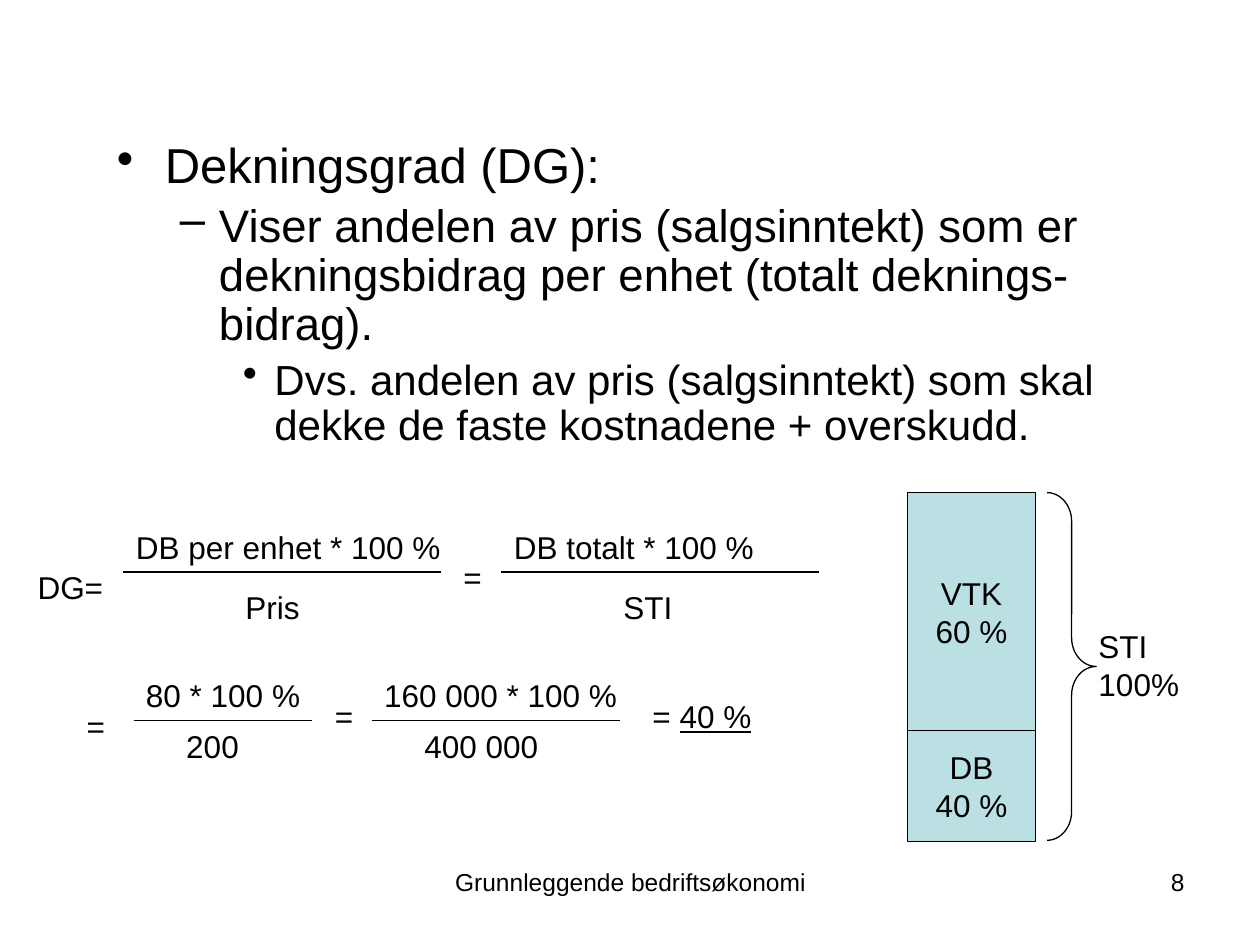
import dataclasses

import lxml.etree
import pptx
import pptx.dml.color
import pptx.enum.shapes
import pptx.enum.text
import pptx.oxml.ns
import pptx.util

PX = pptx.util.Inches(1) // 100
ALIGN = pptx.enum.text.PP_ALIGN
ANCHOR = pptx.enum.text.MSO_ANCHOR
SHAPE = pptx.enum.shapes.MSO_SHAPE


@dataclasses.dataclass(frozen=True)
class Theme:
    font: str = "Arial"
    ink: str = "000000"
    bar: str = "BBE0E3"
    rule: float = 0.75
    footer: int = 14
    formula: int = 18
    levels: tuple = (28, 26, 24)


THEME = Theme()


def color(value):
    return pptx.dml.color.RGBColor.from_string(value)


def add_xml(parent, tag, **attributes):
    return lxml.etree.SubElement(parent, pptx.oxml.ns.qn(tag), attributes)


def style(para, size, align=ALIGN.LEFT):
    para.alignment = align
    para.font.name = THEME.font
    para.font.size = pptx.util.Pt(size)
    para.font.color.rgb = color(THEME.ink)


def outline(item):
    item.line.color.rgb = color(THEME.ink)
    item.line.width = pptx.util.Pt(THEME.rule)


def add_box(shapes, left, top, width, height):
    box = shapes.add_textbox(left * PX, top * PX, width * PX, height * PX)
    box.text_frame.word_wrap = True
    return box


def add_label(shapes, left, top, width, text, height=40):
    box = add_box(shapes, left, top, width, height)
    box.text_frame.auto_size = pptx.enum.text.MSO_AUTO_SIZE.SHAPE_TO_FIT_TEXT
    para = box.text_frame.paragraphs[0]
    para.text = text
    style(para, THEME.formula)
    return para


def add_shape(shapes, kind, left, top, width, height):
    shape = shapes.add_shape(kind, left * PX, top * PX, width * PX, height * PX)
    shape.shadow.inherit = False
    outline(shape)
    return shape


def add_footer(shapes, left, top, width, text, align):
    para = add_box(shapes, left, top, width, 52).text_frame.paragraphs[0]
    para.text = text
    style(para, THEME.footer, align)


def add_body(shapes, left, top, width, height):
    frame = add_box(shapes, left, top, width, height).text_frame
    items = (
        ("Dekningsgrad (DG):", "•", 38, 38),
        ("Viser andelen av pris (salgsinntekt) som er dekningsbidrag per enhet "
         "(totalt deknings-bidrag).", "–", 81, 31),
        ("Dvs. andelen av pris (salgsinntekt) som skal dekke de faste kostnadene "
         "+ overskudd.", "•", 125, 25),
    )
    for level, (text, bullet, margin, hanging) in enumerate(items):
        para = frame.add_paragraph() if level else frame.paragraphs[0]
        para.text = text
        para.level = level
        para.line_spacing = 0.9
        style(para, THEME.levels[level])
        properties = para._p.get_or_add_pPr()
        properties.set("marL", str(margin * PX))
        properties.set("indent", str(-hanging * PX))
        add_xml(add_xml(properties, "a:spcBef"), "a:spcPct", val="20000")
        add_xml(properties, "a:buChar", char=bullet)


def add_fraction(shapes, left, top, width, rule, above, below, indent, drop):
    add_label(shapes, left, top, width, above)
    add_label(shapes, left + indent, top + drop, 126, below)
    line = shapes.add_connector(
        pptx.enum.shapes.MSO_CONNECTOR.STRAIGHT,
        left * PX, (top + 40) * PX, (left + rule) * PX, (top + 40) * PX)
    outline(line)
    add_xml(line._element.spPr, "a:effectLst")


def add_definition(page, left, top):
    shapes = page.shapes.add_group_shape().shapes
    add_label(shapes, left, top + 32, 94, "DG=")
    add_fraction(shapes, left + 78, top, 315, 252,
                 "DB per enhet * 100 %", "Pris", 87, 48)
    add_label(shapes, left + 338, top + 24, 39, "=")
    add_fraction(shapes, left + 378, top, 315, 252,
                 "DB totalt * 100 %", "STI", 87, 48)


def add_calculation(page, left, top):
    shapes = page.shapes.add_group_shape().shapes
    add_label(shapes, left, top + 24, 47, "=")
    add_fraction(shapes, left + 47, top, 315, 142, "80 * 100 %", "200", 32, 40)
    add_label(shapes, left + 197, top + 16, 39, "=")
    add_fraction(shapes, left + 236, top, 213, 197,
                 "160 000 * 100 %", "400 000", 32, 40)
    para = add_label(shapes, left + 449, top + 16, 197, "= ")
    span = para.add_run()
    span.text = "40 %"
    span.font.underline = True


def add_stack(page, left, top):
    shapes = page.shapes.add_group_shape().shapes
    offset = 0
    for height, lines in ((189, ("VTK", "60 %")), (88, ("DB", "40 %"))):
        bar = add_shape(shapes, SHAPE.RECTANGLE, left, top + offset, 102, height)
        bar.fill.solid()
        bar.fill.fore_color.rgb = color(THEME.bar)
        frame = bar.text_frame
        frame.word_wrap = False
        frame.vertical_anchor = ANCHOR.MIDDLE
        frame.text = "\n".join(lines)
        for para in frame.paragraphs:
            style(para, THEME.formula, ALIGN.CENTER)
        offset += height
    brace = add_shape(shapes, SHAPE.RIGHT_BRACE, left + 111, top, 39, 276)
    brace.fill.background()
    brace.adjustments[0] = 0.585
    brace.adjustments[1] = 0.5
    add_label(shapes, left + 142, top + 102, 90, "STI\n100%", 70)


def main():
    deck = pptx.Presentation()
    deck.slide_width = 1000 * PX
    deck.slide_height = 750 * PX
    page = deck.slides.add_slide(deck.slide_layouts[6])
    add_footer(page.shapes, 342, 683, 317, "Grunnleggende bedriftsøkonomi", ALIGN.CENTER)
    add_footer(page.shapes, 717, 683, 233, "8", ALIGN.RIGHT)
    add_body(page.shapes, 83, 107, 850, 276)
    add_definition(page, 20, 414)
    add_calculation(page, 59, 532)
    add_stack(page, 720, 391)
    deck.save("out.pptx")


if __name__ == "__main__":
    main()
